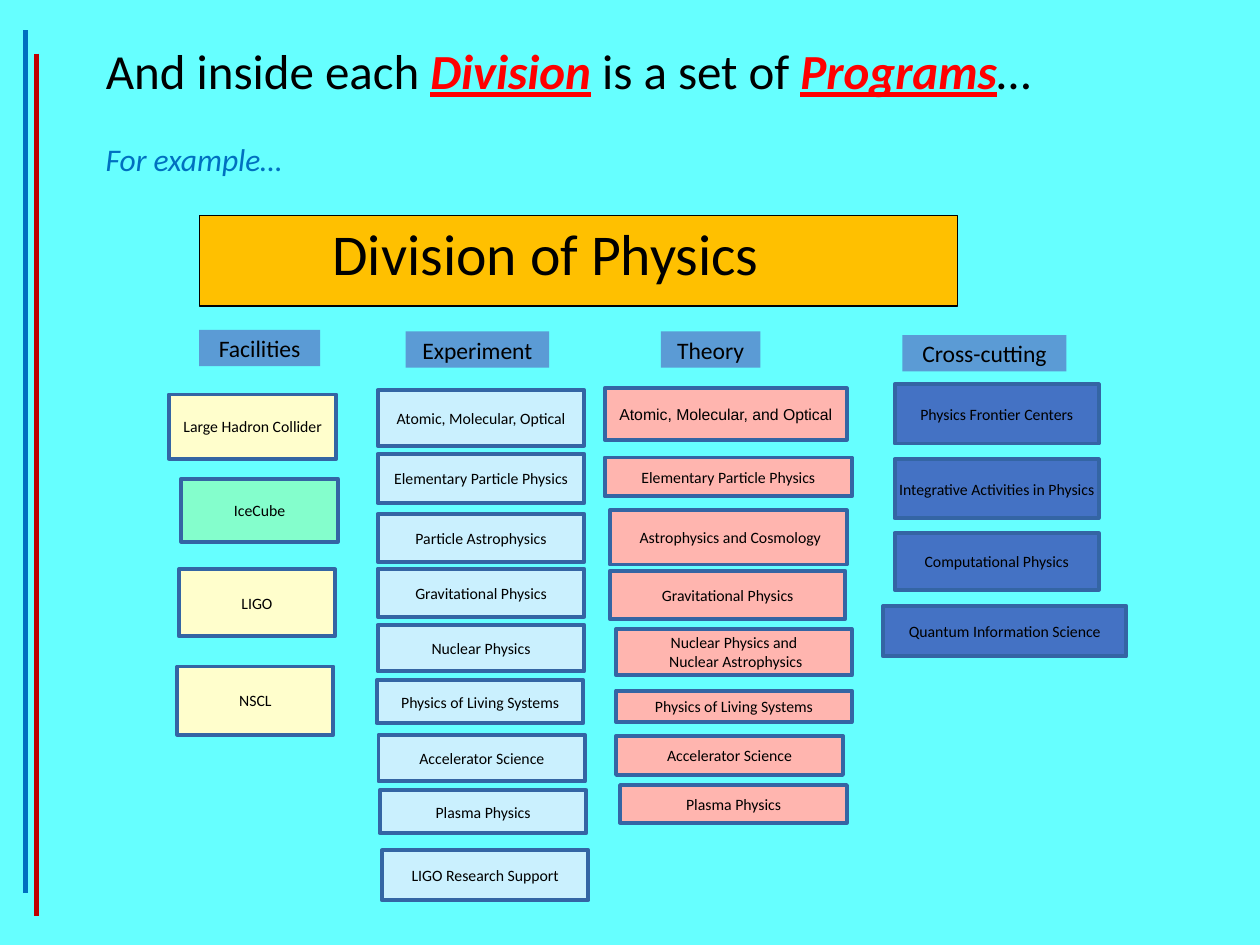
"""Build the slide on the programs inside the Division of Physics."""
from lxml.etree import SubElement
from pptx import Presentation
from pptx.dml.color import RGBColor
from pptx.enum.shapes import MSO_CONNECTOR as Link, MSO_SHAPE as Form
from pptx.enum.text import MSO_ANCHOR as Anchor, MSO_AUTO_SIZE as Auto, PP_ALIGN as Align
from pptx.oxml.ns import qn
from pptx.util import Pt

hue = RGBColor.from_string


def write(para, text, size=9, face="Calibri", color="000000", bold=False, slant=False, under=False):
    run = para.add_run()
    run.text = text
    font = run.font
    font.size, font.name = Pt(size), face
    font.bold, font.italic, font.underline = bold, slant, under
    font.color.rgb = hue(color)


def draw(spot, fill, text="", edge=None, width=2.25, inset=0, **style):
    box = slide.shapes.add_shape(Form.RECTANGLE, *map(Pt, spot))
    box.shadow.inherit = False
    box.fill.solid()
    box.fill.fore_color.rgb = hue(fill)
    if edge:
        box.line.color.rgb = hue(edge)
        box.line.width = Pt(width)
    else:
        box.line.fill.background()
    frame = box.text_frame
    frame.margin_left = frame.margin_right = Pt(inset)
    frame.margin_top = frame.margin_bottom = Pt(inset)
    frame.vertical_anchor = Anchor.MIDDLE
    frame.word_wrap = True
    for n, part in enumerate(text.split("\n") if text else []):
        para = frame.add_paragraph() if n else frame.paragraphs[0]
        para.alignment = Align.CENTER
        write(para, part, **style)
    return box


deck = Presentation()
deck.slide_width, deck.slide_height = Pt(720), Pt(540)
slide = deck.slides.add_slide(deck.slide_layouts[5])
slide.background.fill.solid()
slide.background.fill.fore_color.rgb = hue("66FFFF")

for x, top, end, color in [(14.5, 17.2, 510.2, "0070C0"), (20.9, 30.7, 523.4, "C00000")]:
    rule = slide.shapes.add_connector(Link.STRAIGHT, Pt(x), Pt(top), Pt(x), Pt(end))
    rule.line.color.rgb = hue(color)
    rule.line.width = Pt(3)
    SubElement(rule._element.spPr, qn("a:effectLst"))

title = slide.shapes.title
title.left, title.top, title.width, title.height = map(Pt, (53.3, 19.4, 648, 41))
frame = title.text_frame
frame.word_wrap, frame.auto_size = True, Auto.NONE
frame.vertical_anchor = Anchor.TOP
para = frame.paragraphs[0]
para.alignment = Align.LEFT
key = dict(color="FF0000", bold=True, slant=True, under=True)
for text, style in [("And inside each ", {}), ("Division", key), (" is a set of ", {}),
                    ("Programs", key), ("…", {})]:
    write(para, text, size=28, **style)

draw((113.8, 123.1, 433.4, 51.8), "FFC000", edge="000000", width=0.75)

for spot, text, gap, style in [
        ((53.3, 76.3, 127.4, 28.8), "For example…", 1, dict(size=18, color="0070C0", slant=True)),
        ((182.9, 125.3, 500, 54), "Division of Physics", 0.9, dict(size=33))]:
    frame = slide.shapes.add_textbox(*map(Pt, spot)).text_frame
    frame.word_wrap = True
    frame.paragraphs[0].line_spacing = gap
    write(frame.paragraphs[0], text, **style)

groups = [
    ("Facilities", (113.8, 188.6, 69.1), "FFFECC", [
        ("Large Hadron Collider", 96.5, 225.4, 95.8, 36.7),
        ("IceCube", 103.7, 273.6, 89.3, 36),
        ("LIGO", 102.2, 325.4, 89.3, 38.2),
        ("NSCL", 101.3, 380.9, 89.3, 39)]),
    ("Experiment", (231.8, 189.4, 82), "CAF0FE", [
        ("Atomic, Molecular, Optical", 215.8, 223, 118.1, 31.7),
        ("Elementary Particle Physics", 215.8, 259.4, 118.1, 28.1),
        ("Particle Astrophysics", 215.8, 293.6, 118.1, 27.4),
        ("Gravitational Physics", 215.8, 325, 118.1, 27.4),
        ("Nuclear Physics", 215.8, 357.1, 118.1, 26.6),
        ("Physics of Living Systems", 215.3, 388.8, 118.1, 24.5),
        ("Accelerator Science", 216.3, 420, 118.1, 26.6),
        ("Plasma Physics", 217, 451.7, 118.1, 24.5),
        ("LIGO Research Support", 218.2, 486, 118.1, 28.4)]),
    ("Theory", (377.6, 189.4, 56.9), "FFB5AF", [
        ("Atomic, Molecular, and Optical", 345.6, 221.8, 138.2, 29.5),
        ("Elementary Particle Physics", 345.6, 261.4, 141.1, 22.3),
        (" Astrophysics and Cosmology", 348.5, 291.6, 135.4, 31),
        ("Gravitational Physics", 348.5, 326.2, 134.6, 27.4),
        ("Nuclear Physics and\n Nuclear Astrophysics", 352.1, 359.4, 134.6, 26.6),
        ("Physics of Living Systems", 352.1, 394.6, 134.6, 18),
        ("Accelerator Science", 352.1, 420.5, 129.6, 22.3),
        ("Plasma Physics", 354.4, 448.6, 129.6, 21.6)]),
    ("Cross-cutting", (515.7, 191.5, 93.7), "4472C4", [
        ("Physics Frontier Centers", 511.2, 219.7, 116.6, 33.8),
        ("Integrative Activities in Physics", 511.2, 262.4, 116.6, 33.8),
        ("Computational Physics", 511.2, 304.6, 116.6, 32.4),
        ("Quantum Information Science", 504.6, 346.3, 139, 28.8)])]

for head, (x, y, wide), fill, items in groups:
    draw((x, y, wide, 20.7), "5B9BD5", head, inset=2, size=13.5)
    for text, *spot in items:
        face = "Arial" if text == "Atomic, Molecular, and Optical" else "Calibri"
        tint = "FFFB00" if text == "IceCube" else fill
        box = draw(spot, tint, text, edge="3465A4", face=face)
        if text == "IceCube":
            color = box._element.spPr.find(qn("a:solidFill"))[0]
            SubElement(color, qn("a:alpha")).set("val", "20000")

deck.save("out.pptx")
